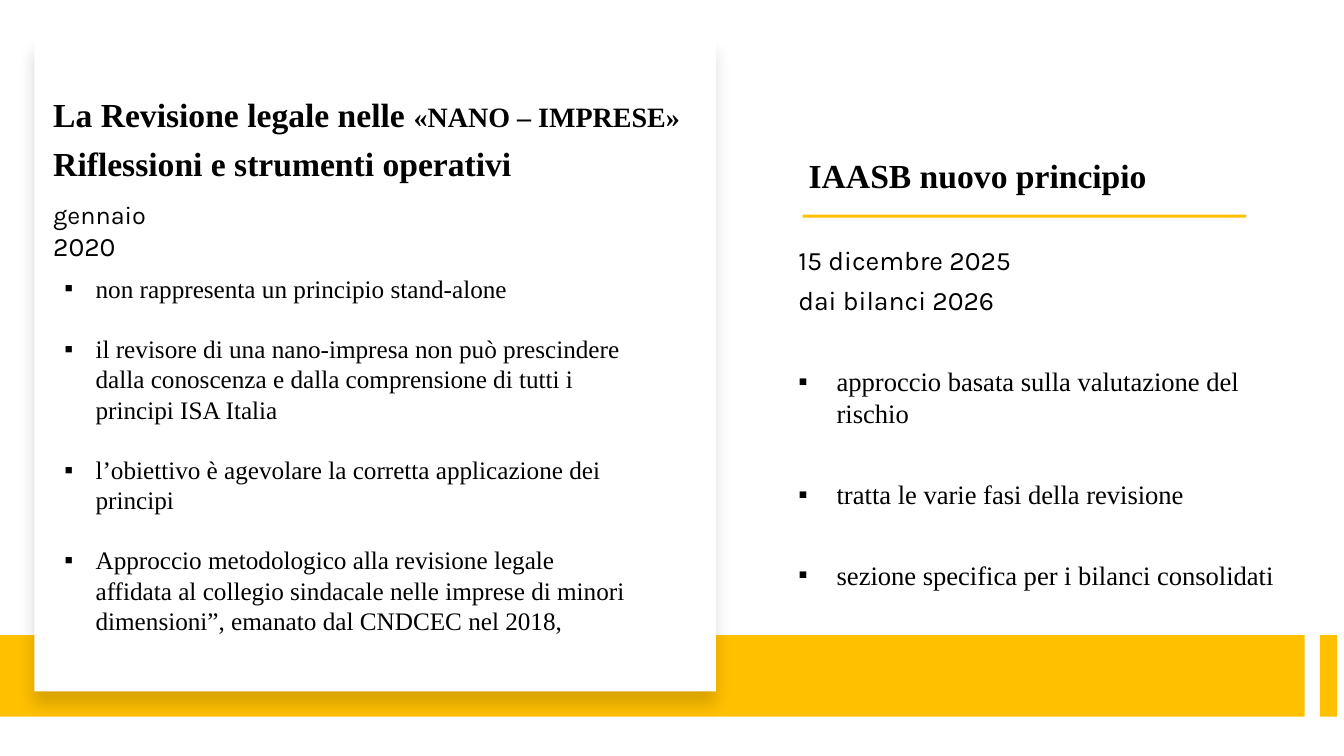
from lxml import etree
from pptx import Presentation
from pptx import util as u
from pptx.dml.color import RGBColor
from pptx.enum import shapes, text
from pptx.oxml.ns import qn

SCALE = 9144
INK = {"text": "000000", "gold": "FFC000", "card": "FFFFFF"}
SERIF = "Times New Roman"
SANS = "Karla"


def px(n):
    return u.Emu(n * SCALE)


def place(item, box):
    item.left, item.top, item.width, item.height = map(px, box)


def block(slide, box, color):
    item = slide.shapes.add_shape(shapes.MSO_SHAPE.RECTANGLE, *map(px, box))
    item.shadow.inherit = False
    item.fill.solid()
    item.fill.fore_color.rgb = RGBColor.from_string(INK[color])
    item.line.fill.background()
    return item


def shade(item, alpha, blur, dist):
    glow = etree.SubElement(
        item._element.spPr.find(qn("a:effectLst")), qn("a:outerShdw"),
        blurRad=str(u.Pt(blur)), dist=str(u.Pt(dist)), dir="5400000",
        algn="t", rotWithShape="0")
    tint = etree.SubElement(glow, qn("a:srgbClr"), val=INK["text"])
    etree.SubElement(tint, qn("a:alpha"), val=str(alpha * 1000))


def frame(slide, box):
    body = slide.shapes.add_textbox(*map(px, box)).text_frame
    body.word_wrap = True
    return body


def write(body, *runs, font=SERIF, bold=False, before=0, after=0, indent=0, line=None):
    first = body.paragraphs[0]
    para = body.add_paragraph() if first.runs else first
    para.space_before, para.space_after = u.Pt(before), u.Pt(after)
    if line:
        para.line_spacing = line
    if indent:
        props = para._p.get_or_add_pPr()
        props.set("marL", str(px(indent)))
        props.set("indent", str(-px(indent)))
        etree.SubElement(props, qn("a:buFont"), typeface="Arial")
        etree.SubElement(props, qn("a:buChar"), char="▪")
    for words, size in runs:
        run = para.add_run()
        run.text = words
        run.font.name, run.font.size, run.font.bold = font, u.Pt(size), bold
        run.font.color.rgb = RGBColor.from_string(INK["text"])


def heading(slide):
    title = slide.shapes.title
    place(title, (792, 68, 468, 131))
    body = title.text_frame
    body.word_wrap = True
    body.vertical_anchor = text.MSO_ANCHOR.BOTTOM
    write(body, ("IAASB nuovo principio", 24), bold=True, line=0.9)
    body.paragraphs[0].alignment = text.PP_ALIGN.LEFT


def bands(slide):
    block(slide, (0, 630, 1294, 81), "gold")
    card = block(slide, (34, 39, 676, 647), "card")
    shade(card, 15, 11, 10)
    block(slide, (796, 213, 440, 3), "gold")
    block(slide, (1309, 630, 17, 81), "gold")


def nano(slide):
    head = frame(slide, (43, 88, 667, 99))
    write(head, ("La Revisione legale nelle ", 24), ("«NANO – IMPRESE»", 20),
          bold=True, after=6)
    write(head, ("Riflessioni e strumenti operativi", 24), bold=True, after=6)

    write(frame(slide, (43, 193, 130, 72)), ("gennaio ", 18), ("2020", 19), font=SANS)

    points = (
        "non rappresenta un principio stand-alone",
        "il revisore di una nano-impresa non può prescindere dalla conoscenza "
        "e dalla comprensione di tutti i principi ISA Italia",
        "l’obiettivo è agevolare la corretta applicazione dei principi",
        "Approccio metodologico alla revisione legale affidata al collegio "
        "sindacale nelle imprese di minori dimensioni”, emanato dal CNDCEC nel 2018,",
    )
    body = frame(slide, (54, 266, 577, 404))
    for i, point in enumerate(points):
        write(body, (point, 18), before=21.5 if i else 0, indent=31)


def board(slide):
    body = frame(slide, (782, 237, 497, 405))
    for words in ("15 dicembre 2025", "dai bilanci 2026"):
        write(body, (words, 19), font=SANS, after=6)
    for point in ("approccio basata sulla valutazione del rischio",
                  "tratta le varie fasi della revisione",
                  "sezione specifica per i bilanci consolidati"):
        write(body, (point, 19), before=29, after=6, indent=38)


def main():
    deck = Presentation()
    deck.slide_width, deck.slide_height = px(1333), px(750)
    slide = deck.slides.add_slide(deck.slide_layouts[5])
    heading(slide)
    bands(slide)
    nano(slide)
    board(slide)
    deck.save("out.pptx")


if __name__ == "__main__":
    main()
